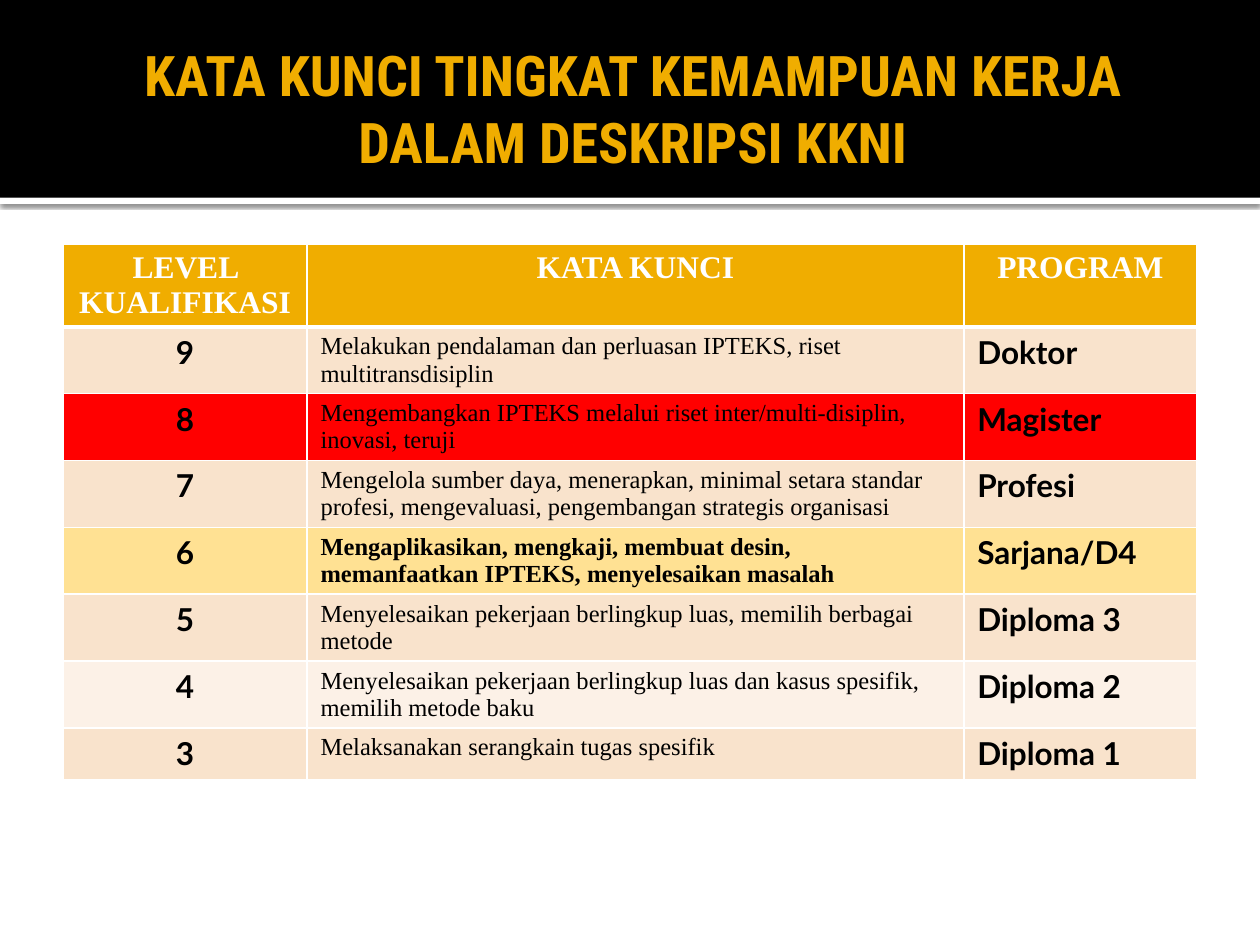
from lxml import etree
from pptx import Presentation
from pptx import util as u
from pptx.dml.color import RGBColor
from pptx.enum import shapes, text
from pptx.oxml.ns import qn

WHITE, BLACK, GOLD = "FFFFFF", "000000", "F0AD00"
PEACH, CREAM, RED, YELLOW = "F9E3CC", "FCF1E7", "FF0000", "FFE193"
SERIF, SANS = "Times New Roman", "Lato"
CENTER, LEFT = text.PP_ALIGN.CENTER, text.PP_ALIGN.LEFT

COLUMN_WIDTHS = [139.5, 375.3, 133.2]
ROW_HEIGHT = 29.5
HEADINGS = ["LEVEL KUALIFIKASI", "KATA KUNCI", "PROGRAM"]
# Level, keywords, program, row colour
LEVELS = [
    ("9", "Melakukan pendalaman dan perluasan IPTEKS, riset multitransdisiplin",
     "Doktor", PEACH),
    ("8", "Mengembangkan IPTEKS melalui riset inter/multi-disiplin, inovasi, teruji",
     "Magister", RED),
    ("7", "Mengelola sumber daya, menerapkan, minimal setara standar profesi, "
     "mengevaluasi, pengembangan strategis organisasi", "Profesi", PEACH),
    ("6", "Mengaplikasikan, mengkaji, membuat desin, memanfaatkan IPTEKS, "
     "menyelesaikan masalah", "Sarjana/D4", YELLOW),
    ("5", "Menyelesaikan pekerjaan berlingkup luas, memilih berbagai metode",
     "Diploma 3", PEACH),
    ("4", "Menyelesaikan pekerjaan berlingkup luas dan kasus spesifik, "
     "memilih metode baku", "Diploma 2", CREAM),
    ("3", "Melaksanakan serangkain tugas spesifik", "Diploma 1", PEACH),
]


def rgb(value):
    return RGBColor.from_string(value)


def write(frame, words, font=SANS, size=18, color=BLACK, bold=True, align=LEFT):
    para = frame.paragraphs[0]
    para.alignment = align
    span = para.add_run()
    span.text = words
    span.font.name = font
    span.font.size = u.Pt(size)
    span.font.bold = bold
    span.font.color.rgb = rgb(color)


def add_band(page, top, height, color):
    band = page.shapes.add_shape(shapes.MSO_SHAPE.RECTANGLE, 0, u.Pt(top),
                                 u.Pt(720), u.Pt(height))
    band.shadow.inherit = False
    band.fill.solid()
    band.fill.fore_color.rgb = rgb(color)
    band.line.fill.background()
    return band


def add_shadow(shape, blur, distance, opacity):
    effects = shape._element.spPr.find(qn("a:effectLst"))
    shadow = etree.SubElement(effects, qn("a:outerShdw"), blurRad=str(u.Pt(blur)),
                              dist=str(u.Pt(distance)), dir="5400000",
                              algn="t", rotWithShape="0")
    tint = etree.SubElement(shadow, qn("a:srgbClr"), val=BLACK)
    etree.SubElement(tint, qn("a:alpha"), val=str(opacity * 1000))


def set_borders(cell, **widths):
    properties = cell._tc.get_or_add_tcPr()
    for side in "LRTB":
        line = etree.SubElement(properties, qn(f"a:ln{side}"),
                                w=str(u.Pt(widths.get(side, 1))))
        fill = etree.SubElement(line, qn("a:solidFill"))
        etree.SubElement(fill, qn("a:srgbClr"), val=WHITE)


def fill_cell(cell, words, fill, borders, **style):
    set_borders(cell, **borders)
    cell.fill.solid()
    cell.fill.fore_color.rgb = rgb(fill)
    cell.margin_left = cell.margin_right = u.Pt(7.7)
    cell.margin_top = cell.margin_bottom = u.Pt(3.6)
    write(cell.text_frame, words, **style)


def add_title(page, words):
    title = page.shapes.title
    title.left, title.top = u.Pt(36), u.Pt(12.2)
    title.width, title.height = u.Pt(648), u.Pt(98.6)
    frame = title.text_frame
    frame.word_wrap = True
    frame.auto_size = text.MSO_AUTO_SIZE.NONE
    frame.vertical_anchor = text.MSO_ANCHOR.MIDDLE
    frame.margin_left = u.Pt(7.2)
    frame.margin_right = frame.margin_top = frame.margin_bottom = u.Pt(3.6)
    write(frame, words, font="Roboto Condensed", size=32, color=GOLD, align=CENTER)
    # Bring the title in front of the bands
    page.shapes._spTree.append(title._element)


def add_level_table(page):
    count = len(LEVELS) + 1
    table = page.shapes.add_table(count, len(HEADINGS), u.Pt(36), u.Pt(139.7),
                                  u.Pt(648), u.Pt(ROW_HEIGHT * count)).table
    for column, width in zip(table.columns, COLUMN_WIDTHS):
        column.width = u.Pt(width)
    for row in table.rows:
        row.height = u.Pt(ROW_HEIGHT)

    # Heading row
    for column, heading in enumerate(HEADINGS):
        fill_cell(table.cell(0, column), heading, GOLD, {"B": 3},
                  font=SERIF, color=WHITE, align=CENTER)

    # One row for each level
    for row, (level, keywords, program, fill) in enumerate(LEVELS, start=1):
        borders = {"T": 3} if row == 1 else {}
        fill_cell(table.cell(row, 0), level, fill, borders, align=CENTER)
        fill_cell(table.cell(row, 1), keywords, fill, borders,
                  font=SERIF, size=14, bold=level == "6")
        fill_cell(table.cell(row, 2), program, fill, borders)


def main():
    deck = Presentation()
    deck.slide_width, deck.slide_height = u.Pt(720), u.Pt(540)
    page = deck.slides.add_slide(deck.slide_layouts[5])

    # Heading bands
    rule = add_band(page, 113, 3.6, WHITE)
    add_shadow(rule, blur=2.5, distance=0.8, opacity=60)
    add_band(page, 0, 113, BLACK)

    add_title(page, "KATA KUNCI TINGKAT KEMAMPUAN KERJA DALAM DESKRIPSI KKNI")
    add_level_table(page)
    deck.save("out.pptx")


if __name__ == "__main__":
    main()
